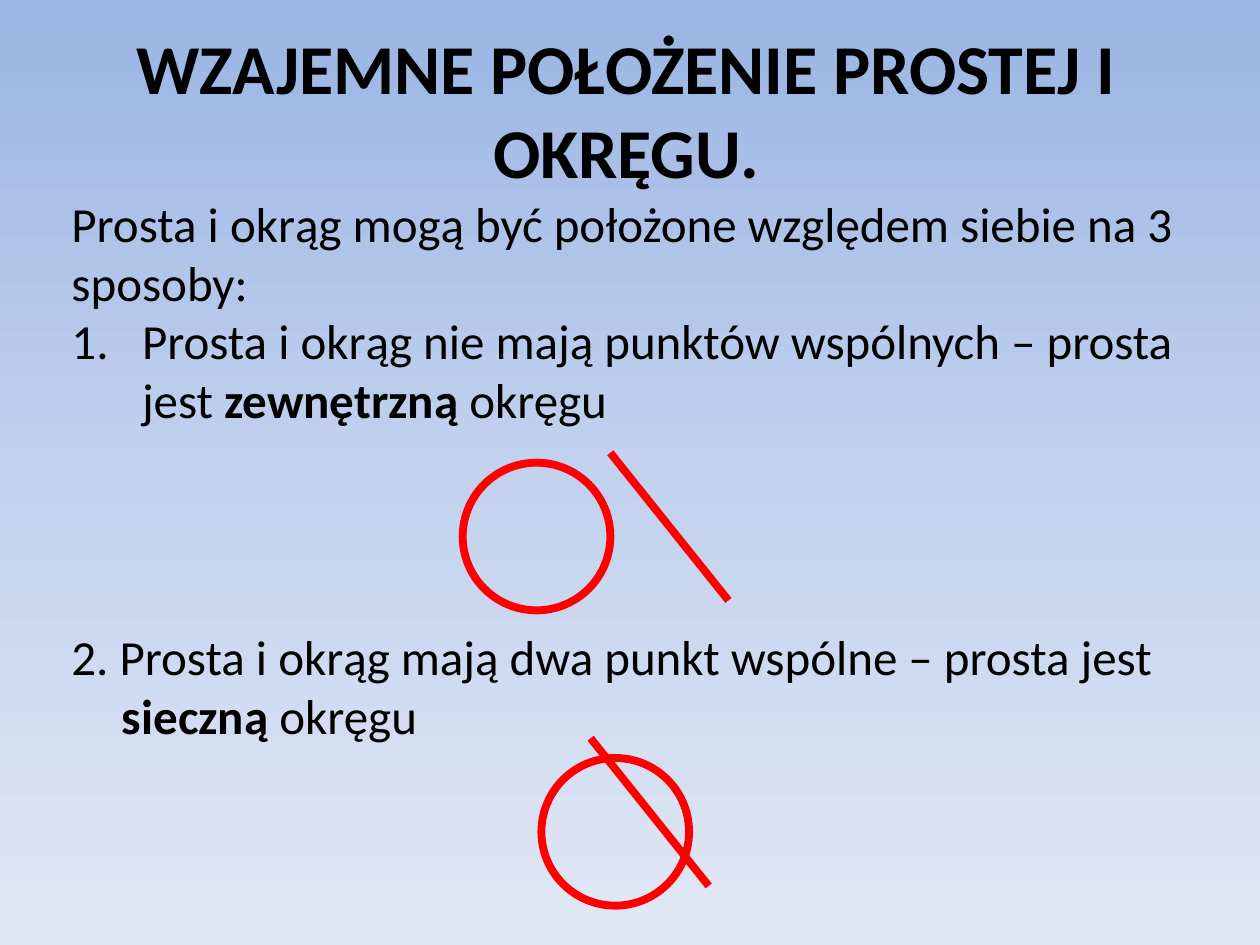
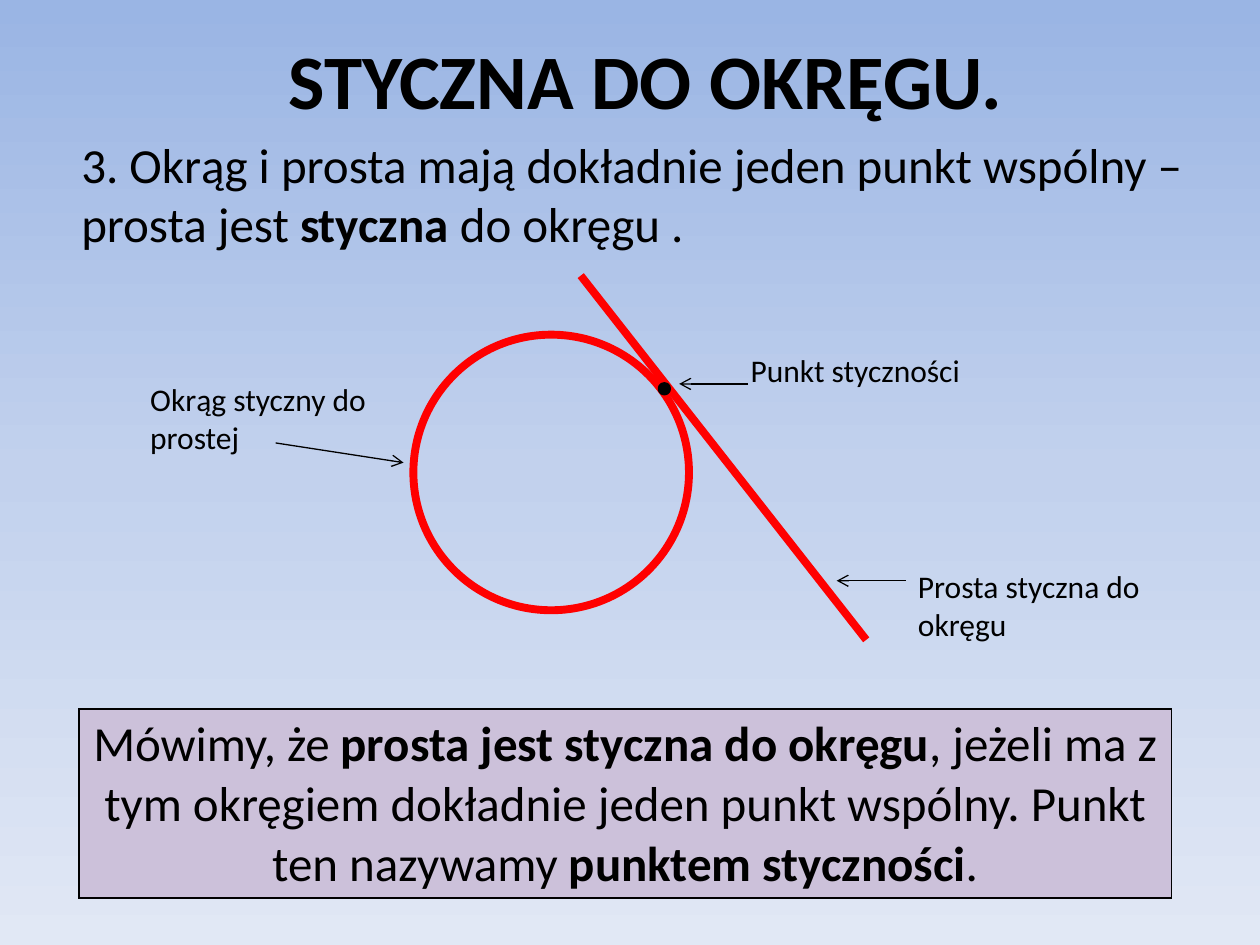
from copy import deepcopy
from dataclasses import dataclass

from lxml import etree
from pptx import Presentation
from pptx.dml.color import RGBColor
from pptx.enum.shapes import MSO_CONNECTOR, MSO_SHAPE
from pptx.enum.text import MSO_ANCHOR, MSO_AUTO_SIZE, PP_ALIGN
from pptx.oxml.ns import qn
from pptx.util import Inches, Pt

STRAIGHT = MSO_CONNECTOR.STRAIGHT
OVAL = MSO_SHAPE.OVAL
MIDDLE = MSO_ANCHOR.MIDDLE
NO_FIT, GROW = MSO_AUTO_SIZE.NONE, MSO_AUTO_SIZE.SHAPE_TO_FIT_TEXT
LEFT, CENTER = PP_ALIGN.LEFT, PP_ALIGN.CENTER
TITLE_ONLY = 5
WIDTH, HEIGHT = Inches(10), Inches(7.5)
COLUMNS, ROWS = 64, 48


@dataclass(frozen=True)
class Theme:
    font: str = "Calibri"
    ink: str = "000000"
    figure: str = "FF0000"
    definition: str = "CCC1DA"
    sky: tuple = ((0, "9AB5E4"), (0.5, "C2D1ED"), (1, "E1E8F5"))
    long_title: float = 40
    title: float = 44
    body: float = 28
    label: float = 18
    figure_line: float = 4.5
    point_line: float = 2
    arrow_line: float = 0.75
    border: float = 1


def apply(target, **values):
    for name, value in values.items():
        setattr(target, name, value)


def colour(code):
    return RGBColor.from_string(code)


def add_xml(parent, tag, **attributes):
    return etree.SubElement(parent, qn(tag), attributes)


def cells(*pairs):
    """Turn alternating columns and rows of the grid into lengths."""
    units = (WIDTH / COLUMNS, HEIGHT / ROWS)
    return [round(n * units[i % 2]) for i, n in enumerate(pairs)]


class Deck:
    def __init__(self, theme):
        self.theme = theme
        self.prs = Presentation()
        apply(self.prs, slide_width=WIDTH, slide_height=HEIGHT)

    # Slide, background and title
    def new_slide(self, title, box, size):
        self.slide = self.prs.slides.add_slide(self.prs.slide_layouts[TITLE_ONLY])
        self.shapes = self.slide.shapes
        fill = self.slide.background.fill
        fill.gradient()
        fill.gradient_angle = 270
        stops = self.slide._element.find(".//" + qn("a:gsLst"))
        stops.append(deepcopy(stops[0]))
        for stop, (position, code) in zip(fill.gradient_stops, self.theme.sky):
            stop.color.rgb = colour(code)
            stop.position = position
        heading = self.slide.shapes.title
        left, top, width, height = cells(*box)
        apply(heading, left=left, top=top, width=width, height=height)
        apply(heading.text_frame, word_wrap=True, auto_size=NO_FIT, vertical_anchor=MIDDLE)
        self.add_runs(heading.text_frame.paragraphs[0], f"*{title}*", size, CENTER)

    def new_figure(self):
        self.shapes = self.slide.shapes.add_group_shape().shapes

    # Text: words between asterisks are bold
    def add_runs(self, paragraph, text, size, align=LEFT):
        paragraph.alignment = align
        for i, part in enumerate(text.split("*")):
            if part:
                run = paragraph.add_run()
                run.text = part
                apply(run.font, name=self.theme.font, size=Pt(size), bold=i % 2 == 1)
                run.font.color.rgb = colour(self.theme.ink)

    def text(self, box, size, *texts):
        frame = self.shapes.add_textbox(*cells(*box)).text_frame
        apply(frame, word_wrap=True, auto_size=GROW)
        for i, text in enumerate(texts):
            paragraph = frame.add_paragraph() if i else frame.paragraphs[0]
            self.add_runs(paragraph, text, size)
        return frame.paragraphs

    def hang(self, paragraph, inches, numbered=False):
        props = paragraph._p.get_or_add_pPr()
        props.set("marL", str(Inches(inches)))
        props.set("indent", str(-Inches(inches)))
        if numbered:
            add_xml(props, "a:buFont", typeface="+mj-lt")
            add_xml(props, "a:buAutoNum", type="arabicPeriod")

    # Geometry
    def circle(self, left, top, size, code, weight, filled=False):
        shape = self.shapes.add_shape(OVAL, *cells(left, top, size, size))
        shape.shadow.inherit = False
        if filled:
            shape.fill.solid()
            shape.fill.fore_color.rgb = colour(code)
        else:
            shape.fill.background()
        self.stroke(shape.line, code, weight)

    def stroke(self, line, code, weight):
        line.color.rgb = colour(code)
        line.width = Pt(weight)

    def segment(self, ends, code, weight):
        connector = self.shapes.add_connector(STRAIGHT, *cells(*ends))
        self.stroke(connector.line, code, weight)
        add_xml(connector._element.spPr, "a:effectLst")
        return connector

    def circle_and_line(self, circle, ends):
        self.new_figure()
        style = (self.theme.figure, self.theme.figure_line)
        self.circle(*circle, *style)
        self.segment(ends, *style)

    def callout(self, text, box, arrow):
        self.text(box, self.theme.label, text)
        pointer = self.segment(arrow, self.theme.ink, self.theme.arrow_line)
        add_xml(pointer._element.spPr.find(qn("a:ln")), "a:tailEnd", type="arrow")

    # Bordered one-cell table
    def definition(self, text, box):
        table = self.slide.shapes.add_table(1, 1, *cells(*box)).table
        apply(table, first_row=False, horz_banding=False)
        cell = table.cell(0, 0)
        props = cell._tc.get_or_add_tcPr()
        for side in "LRTB":
            border = add_xml(props, f"a:ln{side}", w=str(Pt(self.theme.border)))
            add_xml(add_xml(border, "a:solidFill"), "a:srgbClr", val=self.theme.ink)
        cell.fill.solid()
        cell.fill.fore_color.rgb = colour(self.theme.definition)
        self.add_runs(cell.text_frame.paragraphs[0], text, self.theme.body, CENTER)


def main():
    theme = Theme()
    deck = Deck(theme)

    # Line and circle: external and secant
    deck.new_slide("WZAJEMNE POŁOŻENIE PROSTEJ I OKRĘGU.", (3, 1.5, 57.6, 8), theme.long_title)
    _, external, secant = deck.text(
        (3, 9.5, 58, 32), theme.body,
        "Prosta i okrąg mogą być położone względem siebie na 3 sposoby:",
        "Prosta i okrąg nie mają punktów wspólnych – prosta jest *zewnętrzną* okręgu",
        "2. Prosta i okrąg mają dwa punkt wspólne – prosta jest *sieczną *okręgu")
    deck.hang(external, 0.56, numbered=True)
    secant.space_before = Pt(113)
    deck.hang(secant, 0.4)
    deck.circle_and_line((23.5, 23.5, 7.5), (31, 23, 37, 30.5))
    deck.circle_and_line((27.5, 38.5, 7.5), (30, 37.5, 36, 45))

    # Tangent to a circle
    deck.new_slide("STYCZNA DO OKRĘGU.", (4, 0, 57.6, 8), theme.title)
    deck.text((3.5, 6.5, 57.5, 6.7), theme.body,
              "3. Okrąg i prosta mają dokładnie jeden punkt wspólny –"
              "prosta jest *styczna* do okręgu .")
    deck.definition(
        "Mówimy, że *prosta jest styczna do okręgu*, jeżeli ma z tym okręgiem dokładnie "
        "jeden punkt wspólny. Punkt ten nazywamy *punktem styczności*.",
        (4, 36, 55.5, 9.6))
    deck.circle_and_line((21, 17, 14), (29.5, 14, 44, 32.5))
    deck.circle(33.5, 19.5, 0.5, theme.ink, theme.point_line, filled=True)
    deck.callout("Okrąg styczny do prostej", (7, 19, 12.5, 4.5), (14, 22.5, 20.5, 23.5))
    deck.callout("Prosta styczna do okręgu", (46, 28.5, 13.5, 4.5), (46, 29.5, 42.5, 29.5))
    deck.callout("Punkt styczności", (37.5, 17.5, 15.5, 2.5), (38, 19.5, 34.5, 19.5))

    deck.prs.save("out.pptx")


if __name__ == "__main__":
    main()
